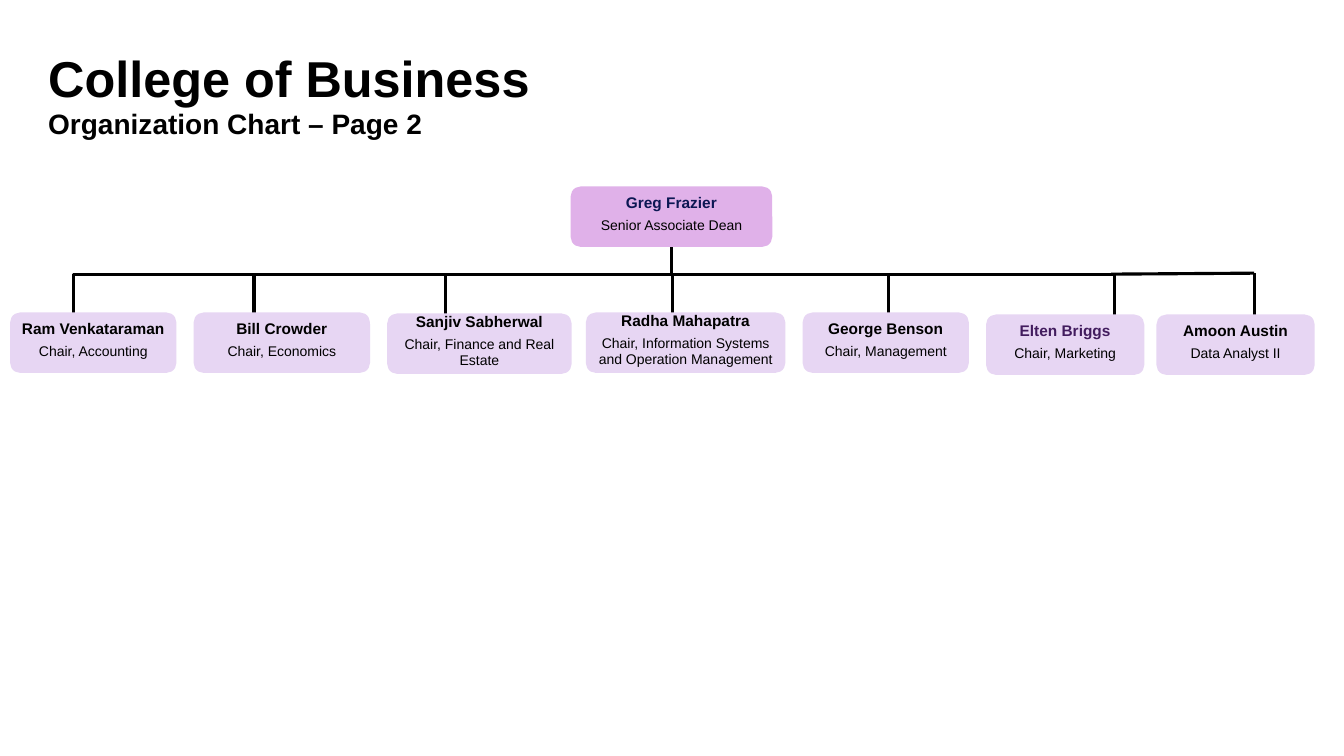
"""Builds the College of Business organization chart on a grid of tenth-inch cells."""
from dataclasses import dataclass

from lxml import etree
from pptx import Presentation
from pptx.dml.color import RGBColor
from pptx.enum.shapes import MSO_CONNECTOR, MSO_SHAPE
from pptx.enum.text import MSO_ANCHOR, PP_ALIGN
from pptx.oxml.ns import qn
from pptx.util import Inches, Pt

ROUND = MSO_SHAPE.ROUNDED_RECTANGLE
LINE, ELBOW = MSO_CONNECTOR.STRAIGHT, MSO_CONNECTOR.ELBOW
TOP, MIDDLE = MSO_ANCHOR.TOP, MSO_ANCHOR.MIDDLE
LEFT, CENTER = PP_ALIGN.LEFT, PP_ALIGN.CENTER
BOTTOM = 2
COLS, ROWS = 133.3, 75


@dataclass(frozen=True)
class Theme:
    """Holds the colours, type sizes and font."""
    font: str = "Arial"
    ink: str = "000000"
    navy: str = "0C1753"
    plum: str = "421C5E"
    dean: str = "E0B1E9"
    chair: str = "E7D6F3"
    title: int = 36
    sub: int = 20
    name: int = 11
    role: int = 10
    stroke: float = 2.25


def cell(count):
    """Turns grid cells into a length."""
    return Inches(count / 10)


def apply(item, values):
    """Sets each named value on the item."""
    for key, value in values.items():
        setattr(item, key, value)


class Chart:
    """Draws text, boxes and lines on one slide."""

    def __init__(self, slide, theme):
        """Keeps the slide and its style."""
        self.shapes = slide.shapes
        self.theme = theme

    def label(self, para, text, size, color, bold, form):
        """Fills a paragraph with one styled run."""
        apply(para, form)
        run = para.add_run()
        run.text = text
        apply(run.font, {"name": self.theme.font, "size": Pt(size), "bold": bold})
        run.font.color.rgb = RGBColor.from_string(color)

    def text(self, area, words, size, anchor, gap):
        """Adds a bold heading."""
        frame = self.shapes.add_textbox(*map(cell, area)).text_frame
        apply(frame, {"word_wrap": True, "vertical_anchor": anchor})
        form = {"alignment": LEFT, "line_spacing": gap}
        self.label(frame.paragraphs[0], words, size, self.theme.ink, True, form)

    def box(self, area, name, role, fill, color):
        """Adds a rounded box with a name and a role."""
        box = self.shapes.add_shape(ROUND, *map(cell, area))
        box.shadow.inherit = False
        box.fill.solid()
        box.fill.fore_color.rgb = RGBColor.from_string(fill)
        box.line.fill.background()
        frame = box.text_frame
        side = Inches(0.01)
        apply(frame, {"word_wrap": True, "vertical_anchor": MIDDLE,
                      "margin_left": side, "margin_right": side,
                      "margin_top": side, "margin_bottom": Inches(0.06)})
        form = {"alignment": CENTER, "line_spacing": 0.9, "space_after": Pt(5)}
        self.label(frame.paragraphs[0], name, self.theme.name, color, True, form)
        self.label(frame.add_paragraph(), role, self.theme.role, self.theme.ink, False, form)
        return box

    def line(self, start, end, kind=LINE):
        """Adds a straight line or a single-bend connector."""
        link = self.shapes.add_connector(kind, *map(cell, (*start, *end)))
        link.line.width = Pt(self.theme.stroke)
        link.line.color.rgb = RGBColor.from_string(self.theme.ink)
        props = link._element.spPr
        etree.SubElement(props, qn("a:effectLst"))
        if kind == ELBOW:
            props.find(qn("a:prstGeom")).set("prst", "bentConnector2")
        return link


def main():
    """Builds and saves the slide."""
    deck = Presentation()
    deck.slide_width, deck.slide_height = cell(COLS), cell(ROWS)
    theme = Theme()
    chart = Chart(deck.slides.add_slide(deck.slide_layouts[6]), theme)

    chart.text((3.8, 3.4, 57.3, 9.3), "College of Business", theme.title, MIDDLE, 0.9)
    chart.text((3.8, 10.7, 40, 4), "Organization Chart – Page 2", theme.sub, TOP, 0.8)

    dean = chart.box((56.6, 18.5, 20, 6), "Greg Frazier", "Senior Associate Dean",
                     theme.dean, theme.navy)
    stem = chart.line((66.6, 27.4), (66.6, 24.5))
    stem.end_connect(dean, BOTTOM)

    bus = 27.2
    for end in ((7.3, 31.2), (110.5, 31.3)):
        chart.line((61, bus), end, ELBOW)
    for col in (25.2, 44.2, 66.7, 88.1, 124.4):
        chart.line((col, bus - 0.1), (col, 31.3))
    chart.line((110.2, bus), (124.4, bus - 0.1))

    staff = (
        (1, 31, 16.5, "Ram Venkataraman", "Chair, Accounting", theme.ink),
        (19.2, 31, 17.5, "Bill Crowder", "Chair, Economics", theme.ink),
        (38.4, 31.1, 18.3, "Sanjiv Sabherwal", "Chair, Finance and Real Estate", theme.ink),
        (58.1, 31, 19.8, "Radha Mahapatra",
         "Chair, Information Systems and Operation Management", theme.ink),
        (79.6, 31, 16.5, "George Benson", "Chair, Management", theme.ink),
        (97.8, 31.2, 15.7, "Elten Briggs", "Chair, Marketing", theme.plum),
        (114.7, 31.2, 15.7, "Amoon Austin", "Data Analyst II", theme.ink),
    )
    for left, top, width, name, role, color in staff:
        chart.box((left, top, width, 6), name, role, theme.chair, color)

    deck.save("out.pptx")


if __name__ == "__main__":
    main()
